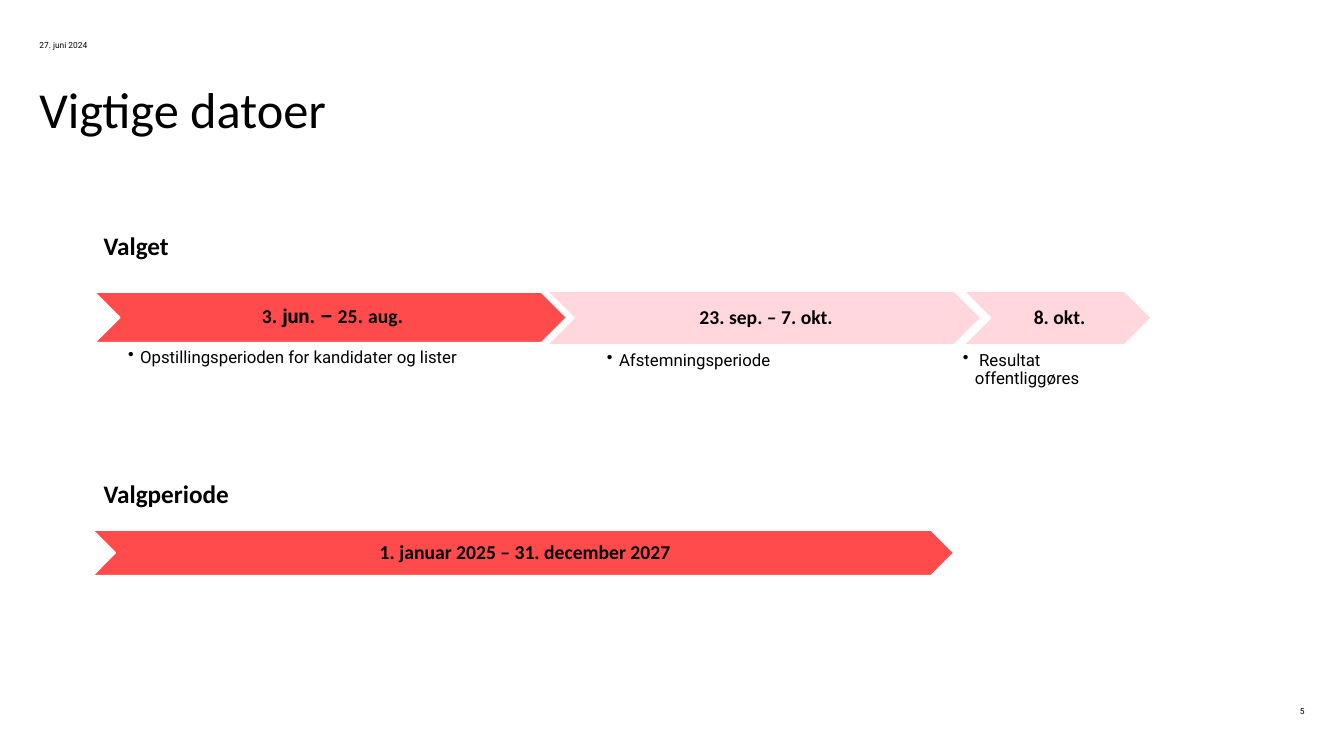
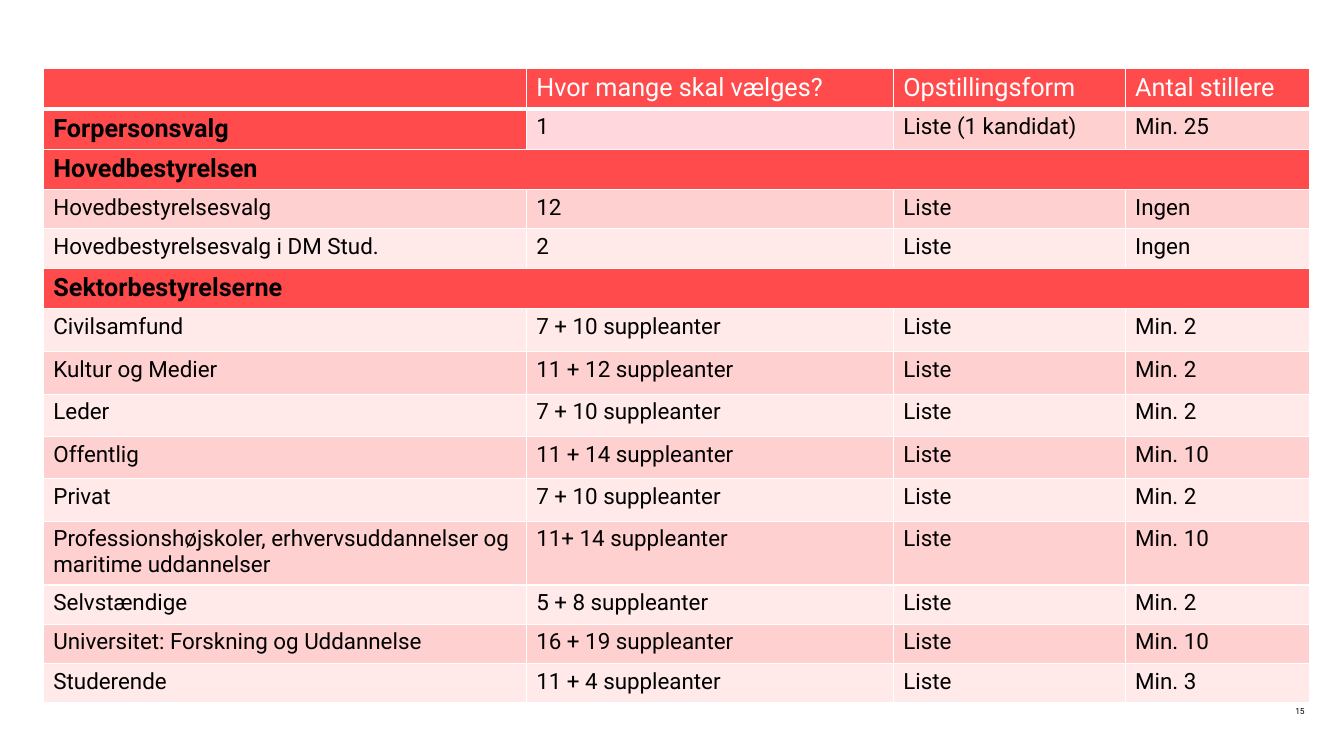
from dataclasses import dataclass

from lxml.etree import SubElement
from pptx import Presentation
from pptx.dml.color import RGBColor as Rgb
from pptx.enum.shapes import MSO_SHAPE as Shape
from pptx.enum.text import MSO_ANCHOR as Anchor, PP_ALIGN as Align
from pptx.oxml.ns import qn
from pptx.util import Emu, Pt

PX = 9144  # 100 px to the inch


@dataclass(frozen=True)
class Theme:
    red: str = "FF4B4B"
    pink: str = "FFD7DC"
    band: str = "FFD0D0"
    pale: str = "FFE9E9"
    black: str = "000000"
    white: str = "FFFFFF"
    head_font: str = "Calibri"
    body_font: str = "Roboto"
    title: int = 36
    heading: int = 18
    cell: int = 16
    step: int = 14
    note: int = 12
    small: int = 6


@dataclass(frozen=True)
class Box:
    left: int
    top: int
    width: int
    height: int

    def inner(self, left, top, width, height):
        return Box(self.left + left, self.top + top, width, height)

    def emu(self):
        return [px(v) for v in (self.left, self.top, self.width, self.height)]


THEME = Theme()
DATE_BOX = Box(39, 39, 108, 12)
TITLE_BOX = Box(39, 88, 1255, 77)
NUMBER_BOX = Box(1256, 699, 38, 12)
BORDER_SIDES = ("L", "R", "T", "B")


def px(value):
    return Emu(value * PX)


def rgb(color):
    return Rgb.from_string(color)


def apply(target, values):
    for name, value in values.items():
        setattr(target, name, value)


# Text
def write(frame, spans, size, font=THEME.body_font, bold=False,
          color=THEME.black, bullet=False, **para_format):
    """Fill one paragraph; spans is a text or a list of (text, font)."""
    para = frame.paragraphs[0]
    if bullet:
        props = para._p.get_or_add_pPr()
        props.set("marL", str(px(12)))
        props.set("indent", str(px(-12)))
        SubElement(props, qn("a:buChar")).set("char", "•")
    apply(para, para_format)
    for text, face in [(spans, font)] if isinstance(spans, str) else spans:
        span = para.add_run()
        span.text = text
        apply(span.font, {"size": Pt(size), "name": face, "bold": bold})
        span.font.color.rgb = rgb(color)


def set_frame(frame, insets, anchor):
    sides = ("margin_left", "margin_top", "margin_right", "margin_bottom")
    apply(frame, {"word_wrap": True, "vertical_anchor": anchor})
    apply(frame, {side: px(inset) for side, inset in zip(sides, insets)})


def add_text(page, box, spans, size, insets=(0, 0, 0, 0), anchor=Anchor.TOP, **style):
    frame = page.shapes.add_textbox(*box.emu()).text_frame
    set_frame(frame, insets, anchor)
    write(frame, spans, size, **style)


# Parts shared by the slides
def add_page(deck, number):
    page = deck.slides.add_slide(deck.slide_layouts[6])
    add_text(page, NUMBER_BOX, str(number), THEME.small,
             anchor=Anchor.MIDDLE, alignment=Align.RIGHT)
    return page


def add_title(page, title, date):
    add_text(page, DATE_BOX, date, THEME.small, anchor=Anchor.MIDDLE)
    add_text(page, TITLE_BOX, title, THEME.title, font=THEME.head_font, line_spacing=0.83)


# Timeline: a heading, chevrons and a bullet under each
def add_chevron(page, box, spans, fill):
    chevron = page.shapes.add_shape(Shape.CHEVRON, *box.emu())
    chevron.shadow.inherit = False
    chevron.fill.solid()
    chevron.fill.fore_color.rgb = rgb(fill)
    chevron.line.color.rgb = rgb(THEME.white)
    chevron.line.width = Pt(1)
    set_frame(chevron.text_frame, (6, 2, 2, 2), Anchor.MIDDLE)
    write(chevron.text_frame, spans, THEME.step, font=THEME.head_font, bold=True,
          alignment=Align.CENTER, line_spacing=0.9)


def add_timeline(page, box, heading, steps):
    add_text(page, box.inner(0, 0, 172, 40), heading, THEME.heading,
             insets=(10, 5, 10, 5), font=THEME.head_font, bold=True)
    for spans, fill, place, note, note_place in steps:
        add_chevron(page, box.inner(*place), spans, fill)
        if note:
            add_text(page, box.inner(*note_place), note, THEME.note,
                     bullet=True, line_spacing=0.9)


# Table
def add_borders(cell, top, bottom):
    props = cell._tc.get_or_add_tcPr()
    for side, width in zip(BORDER_SIDES, (1, 1, top, bottom)):
        line = SubElement(props, qn(f"a:ln{side}"), w=str(Pt(width)))
        fill = SubElement(line, qn("a:solidFill"))
        SubElement(fill, qn("a:srgbClr"), val=THEME.white)


def cell_look(row, col, is_section):
    """Return the fill and the text style of a cell."""
    if row == 0:
        return THEME.red, {"size": THEME.heading, "color": THEME.white}
    if is_section or (row, col) == (1, 0):
        return THEME.red, {"size": THEME.heading, "bold": True}
    if (row, col) == (1, 1):
        return THEME.pink, {"size": THEME.cell}
    return (THEME.band if row % 2 else THEME.pale), {"size": THEME.cell}


def add_election_table(page, box, widths, rows):
    table = page.shapes.add_table(len(rows), len(widths), *box.emu()).table
    apply(table, {"first_row": False, "horz_banding": False})
    for column, width in zip(table.columns, widths):
        column.width = px(width)
    for r, (height, *texts) in enumerate(rows):
        table.rows[r].height = px(height)
        is_section = len(texts) == 1
        for c in range(len(widths)):
            cell = table.cell(r, c)
            fill, style = cell_look(r, c, is_section)
            add_borders(cell, top=3 if r == 1 else 1, bottom=3 if r == 0 else 1)
            cell.fill.solid()
            cell.fill.fore_color.rgb = rgb(fill)
            if c < len(texts) and texts[c]:
                write(cell.text_frame, texts[c], **style)
        if is_section:
            table.cell(r, 0).merge(table.cell(r, len(widths) - 1))


# Contents
HEAD, BODY = THEME.head_font, THEME.body_font
ELECTION_STEPS = [
    ([("3", HEAD), (". jun. – ", BODY), ("25", HEAD), (". ", BODY), ("aug", HEAD), (".", BODY)],
     THEME.red, (1, 66, 468, 50),
     "Opstillingsperioden for kandidater og lister", (34, 122, 413, 37)),
    ("23. sep. – 7. okt.", THEME.pink, (450, 65, 430, 53),
     "Afstemningsperiode", (509, 125, 283, 37)),
    ("8. okt.", THEME.pink, (863, 65, 186, 53),
     " Resultat offentliggøres", (862, 125, 178, 37)),
]
TERM_STEPS = [
    ("1. januar 2025 – 31. december 2027", THEME.red, (-1, 56, 854, 45), None, None),
]
COLUMN_WIDTHS = (479, 364, 230, 183)
ELECTION_ROWS = [
    (39, "", "Hvor mange skal vælges?", "Opstillingsform", "Antal stillere"),
    (39, "Forpersonsvalg", "1", "Liste (1 kandidat)", "Min. 25"),
    (39, "Hovedbestyrelsen"),
    (39, "Hovedbestyrelsesvalg", "12", "Liste", "Ingen"),
    (39, "Hovedbestyrelsesvalg i DM Stud.", "2", "Liste", "Ingen"),
    (39, "Sektorbestyrelserne"),
    (43, "Civilsamfund", "7 + 10 suppleanter", "Liste", "Min. 2"),
    (42, "Kultur og Medier", "11 + 12 suppleanter", "Liste", "Min. 2"),
    (42, "Leder", "7 + 10 suppleanter", "Liste", "Min. 2"),
    (42, "Offentlig", "11 + 14 suppleanter", "Liste", "Min. 10"),
    (42, "Privat", "7 + 10 suppleanter", "Liste", "Min. 2"),
    (62, "Professionshøjskoler, erhvervsuddannelser og maritime uddannelser",
     "11+ 14 suppleanter", "Liste", "Min. 10"),
    (39, "Selvstændige", "5 + 8 suppleanter", "Liste", "Min. 2"),
    (39, "Universitet: Forskning og Uddannelse", "16 + 19 suppleanter", "Liste", "Min. 10"),
    (39, "Studerende", "11 + 4 suppleanter", "Liste", "Min. 3"),
]


# Slides
def build_dates(deck):
    page = add_page(deck, 5)
    add_title(page, "Vigtige datoer", "27. juni 2024")
    add_timeline(page, Box(93, 224, 1049, 162), "Valget", ELECTION_STEPS)
    add_timeline(page, Box(93, 470, 853, 101), "Valgperiode", TERM_STEPS)


def build_elections(deck):
    page = add_page(deck, 15)
    add_election_table(page, Box(43, 68, 1256, 629), COLUMN_WIDTHS, ELECTION_ROWS)


def main():
    deck = Presentation()
    apply(deck, {"slide_width": px(1333), "slide_height": px(750)})
    build_dates(deck)
    build_elections(deck)
    deck.save("out.pptx")


if __name__ == "__main__":
    main()
